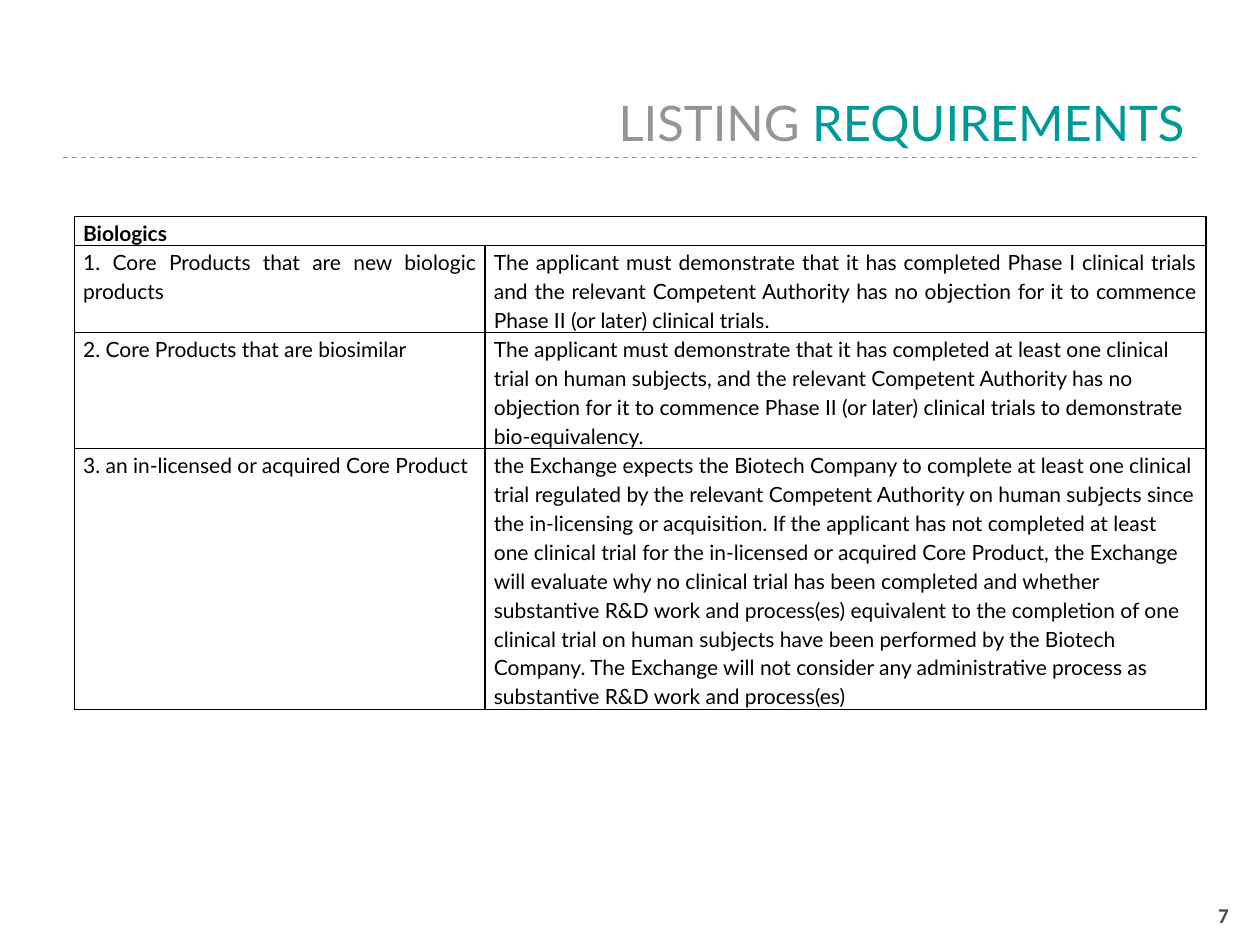
from lxml import etree
from pptx import Presentation
from pptx.dml.color import RGBColor
from pptx.enum import dml, shapes, text
from pptx.oxml.ns import qn
from pptx.util import Inches, Pt

COLOURS = {"grey": "959595", "teal": "009999", "black": "000000", "slate": "464653"}
LEFT, RIGHT, JUSTIFY = text.PP_ALIGN.LEFT, text.PP_ALIGN.RIGHT, text.PP_ALIGN.JUSTIFY

TITLE = [("LISTING ", "grey"), ("REQUIREMENTS", "teal")]
PAGE_NUMBER = "7"
HEADING = "Biologics"
# Each row: lines of text it holds, then (text, alignment) for each column
REQUIREMENTS = [
    (3,
     ("1. Core Products that are new biologic products", JUSTIFY),
     ("The applicant must demonstrate that it has completed Phase I clinical trials and "
      "the relevant Competent Authority has no objection for it to commence Phase II "
      "(or later) clinical trials.", JUSTIFY)),
    (4,
     ("2. Core Products that are biosimilar", LEFT),
     ("The applicant must demonstrate that it has completed at least one clinical trial on "
      "human subjects, and the relevant Competent Authority has no objection for it to "
      "commence Phase II (or later) clinical trials to demonstrate bio-equivalency.", LEFT)),
    (9,
     ("3. an in-licensed or acquired Core Product", JUSTIFY),
     ("the Exchange expects the Biotech Company to complete at least one clinical trial "
      "regulated by the relevant Competent Authority on human subjects since the "
      "in-licensing or acquisition. If the applicant has not completed at least one clinical "
      "trial for the in-licensed or acquired Core Product, the Exchange will evaluate why no "
      "clinical trial has been completed and whether substantive R&D work and process(es) "
      "equivalent to the completion of one clinical trial on human subjects have been "
      "performed by the Biotech Company. The Exchange will not consider any administrative "
      "process as substantive R&D work and process(es)", LEFT)),
]
COLUMN_WIDTHS = [3.26, 5.72]
LINE_HEIGHT = 0.23


def write(frame, spans, size=12, font="Lato", bold=False, align=LEFT, spacing=None):
    """Fill the first paragraph with (text, colour name) spans."""
    para = frame.paragraphs[0]
    para.alignment = align
    para.line_spacing = spacing
    for words, colour in spans:
        span = para.add_run()
        span.text = words
        span.font.size = Pt(size)
        span.font.name = font
        span.font.bold = bold
        span.font.color.rgb = RGBColor.from_string(COLOURS[colour])


def place(shape, left, top, width, height):
    shape.left, shape.top = Inches(left), Inches(top)
    shape.width, shape.height = Inches(width), Inches(height)


def add_borders(cell):
    properties = cell._tc.get_or_add_tcPr()
    for position, side in enumerate(("a:lnL", "a:lnR", "a:lnT", "a:lnB")):
        border = etree.Element(qn(side), w=str(Pt(1)))
        fill = etree.SubElement(border, qn("a:solidFill"))
        etree.SubElement(fill, qn("a:srgbClr"), val=COLOURS["black"])
        properties.insert(position, border)


def fill_cell(cell, words, **style):
    cell.fill.background()
    cell.margin_left = cell.margin_right = Inches(0.07)
    cell.margin_top = cell.margin_bottom = 0
    write(cell.text_frame, [(words, "black")], spacing=1.15, **style)


def add_title(page):
    title = page.shapes.title
    place(title, 0.5, 0.17, 9, 1.08)
    title.text_frame.vertical_anchor = text.MSO_ANCHOR.BOTTOM
    write(title.text_frame, TITLE, size=28, align=RIGHT)
    rule = page.shapes.add_connector(
        shapes.MSO_CONNECTOR.STRAIGHT, Inches(0.5), Inches(1.25), Inches(9.5), Inches(1.25))
    rule.line.color.rgb = RGBColor.from_string(COLOURS["grey"])
    rule.line.width = Pt(0.75)
    rule.line.dash_style = dml.MSO_LINE.DASH
    etree.SubElement(rule._element.spPr, qn("a:effectLst"))


def add_requirements(page):
    line_counts = [1] + [row[0] for row in REQUIREMENTS]
    table = page.shapes.add_table(
        len(line_counts), len(COLUMN_WIDTHS), Inches(0.59), Inches(1.72),
        Inches(sum(COLUMN_WIDTHS)), Inches(sum(line_counts) * LINE_HEIGHT)).table
    table.first_row = table.horz_banding = False
    for column, width in zip(table.columns, COLUMN_WIDTHS):
        column.width = Inches(width)
    for row, count in zip(table.rows, line_counts):
        row.height = Inches(count * LINE_HEIGHT)
    table.cell(0, 0).merge(table.cell(0, 1))
    fill_cell(table.cell(0, 0), HEADING, bold=True)
    for row, (_, *entries) in enumerate(REQUIREMENTS, start=1):
        for column, (words, align) in enumerate(entries):
            fill_cell(table.cell(row, column), words, align=align)
    for cell in table.iter_cells():
        add_borders(cell)


def add_page_number(page):
    box = page.shapes.add_textbox(Inches(7.68), Inches(7.14), Inches(2.17), Inches(0.24))
    frame = box.text_frame
    frame.word_wrap = True
    frame.vertical_anchor = text.MSO_ANCHOR.MIDDLE
    write(frame, [(PAGE_NUMBER, "slate")], font="Calibri", bold=True, align=RIGHT)


def main():
    deck = Presentation()
    deck.slide_width, deck.slide_height = Inches(10), Inches(7.5)
    page = deck.slides.add_slide(deck.slide_layouts[5])
    add_title(page)
    add_page_number(page)
    add_requirements(page)
    deck.save("out.pptx")


if __name__ == "__main__":
    main()
